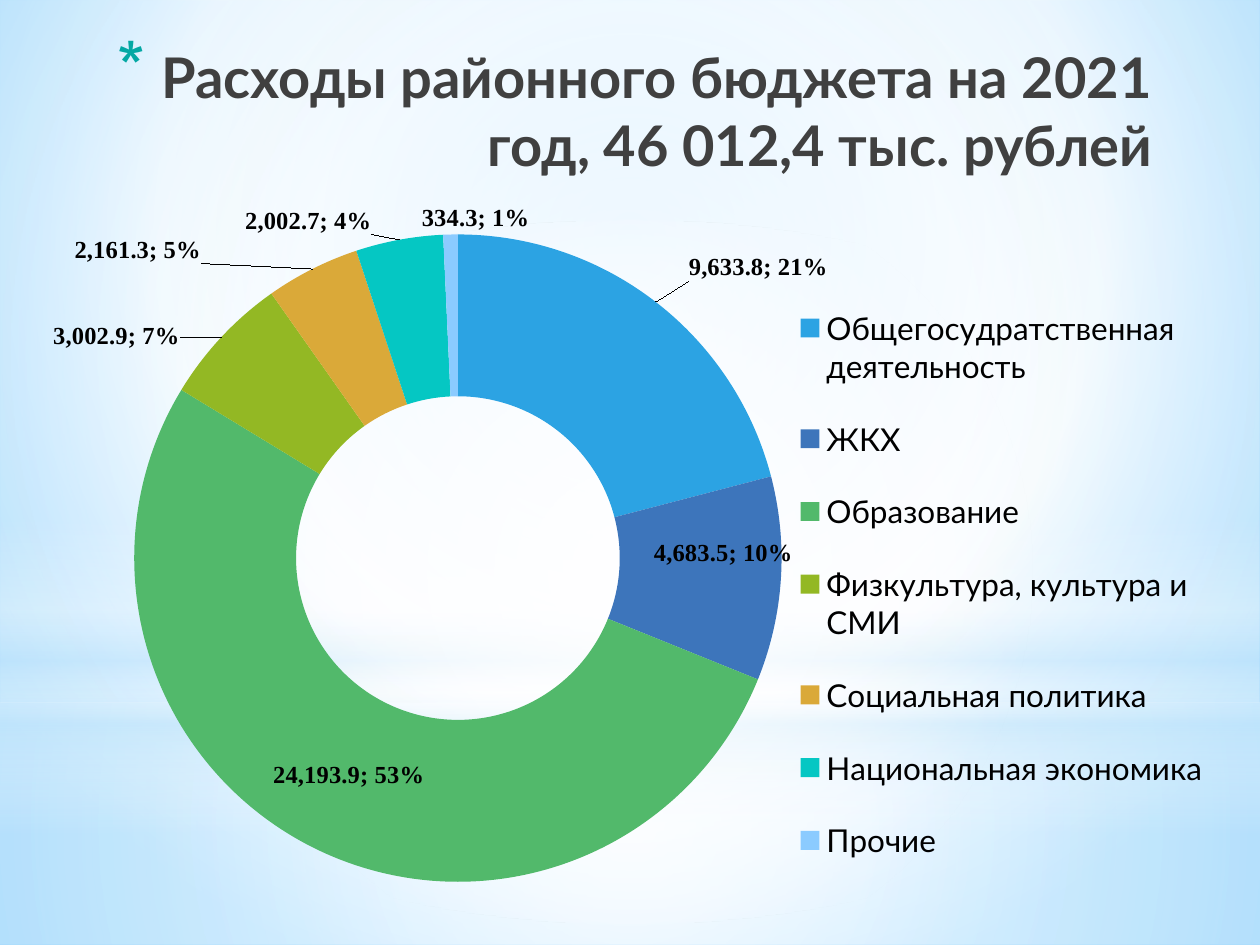
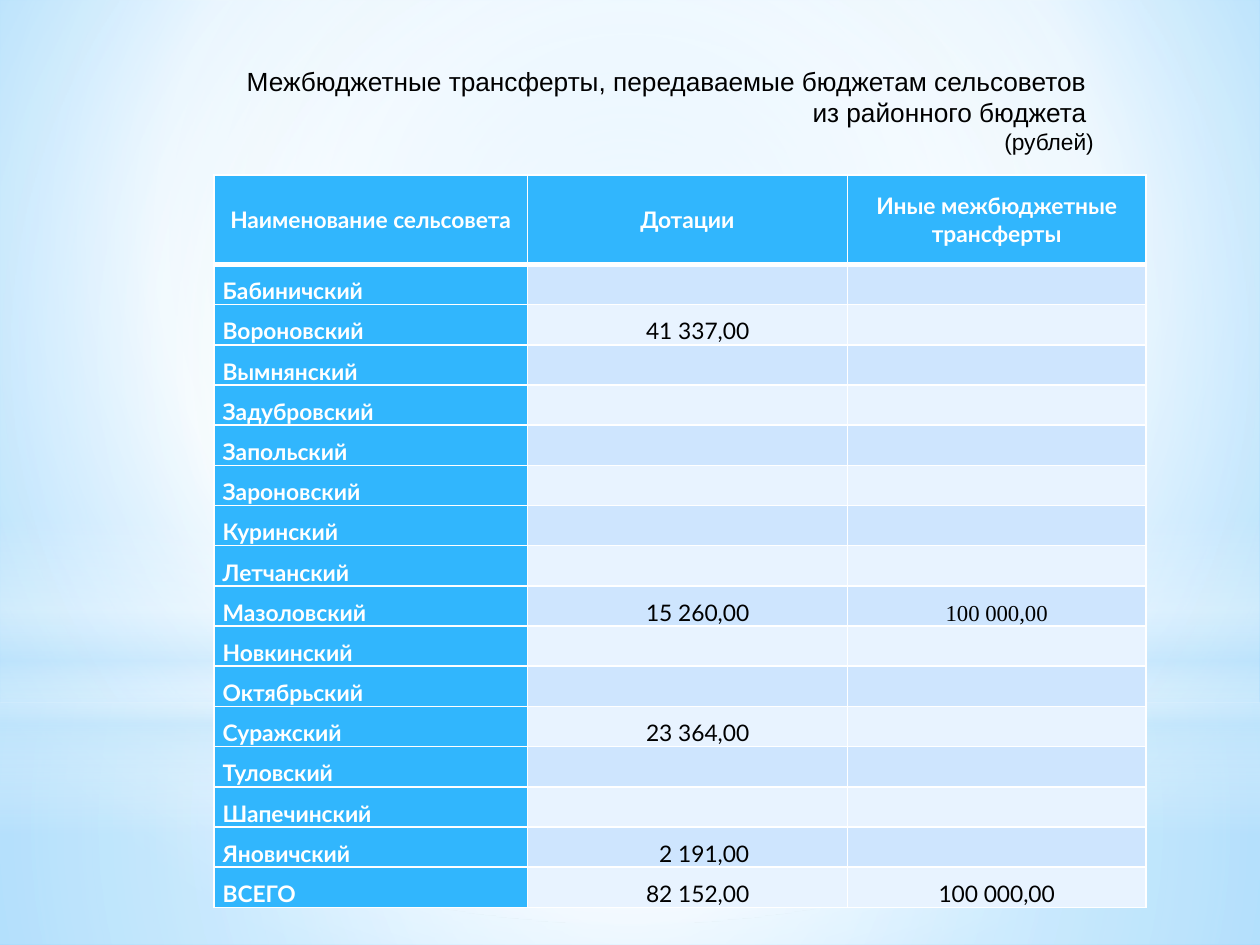
from copy import deepcopy

from lxml import etree
from pptx import Presentation
from pptx.chart.data import CategoryChartData
from pptx.dml.color import RGBColor
from pptx.enum.chart import XL_CHART_TYPE, XL_LEGEND_POSITION
from pptx.enum.shapes import MSO_SHAPE
from pptx.enum.text import MSO_ANCHOR, PP_ALIGN
from pptx.oxml import parse_xml
from pptx.oxml.ns import nsdecls, qn
from pptx.util import Cm, Pt

DOUGHNUT = XL_CHART_TYPE.DOUGHNUT
LEGEND_RIGHT = XL_LEGEND_POSITION.RIGHT
RECTANGLE, OVAL = MSO_SHAPE.RECTANGLE, MSO_SHAPE.OVAL
MIDDLE, BOTTOM = MSO_ANCHOR.MIDDLE, MSO_ANCHOR.BOTTOM
LEFT, CENTER, RIGHT = PP_ALIGN.LEFT, PP_ALIGN.CENTER, PP_ALIGN.RIGHT

WHITE = RGBColor(0xFF, 0xFF, 0xFF)
BLACK = RGBColor(0x00, 0x00, 0x00)
CHARCOAL = RGBColor(0x40, 0x40, 0x40)
TEAL = RGBColor(0x04, 0xA8, 0xA4)
MIST = RGBColor(0xC6, 0xE7, 0xFC)
SKY = RGBColor(0xB0, 0xE0, 0xFF)
AZURE = RGBColor(0x6B, 0xC5, 0xFF)
HEADER_BLUE = RGBColor(0x31, 0xB6, 0xFD)
ROW_DARK = RGBColor(0xCE, 0xE5, 0xFE)
ROW_LIGHT = RGBColor(0xE8, 0xF3, 0xFF)

MAIN_FONT, SERIF_FONT, CAPTION_FONT = "Lato", "Times New Roman", "Arial"
PAGE_WIDTH, PAGE_HEIGHT = 25.4, 19.05
CENTRE = (50, 50, 50, 50)

# Shape, top, height, gradient stops (position, colour, opacity), focus box.
# Without a focus box the gradient runs from top to bottom.
BACKDROP = [
    (RECTANGLE, 14.17, 4.88, [(0, WHITE, 91), (37, WHITE, 76), (100, MIST, 79)], CENTRE),
    (RECTANGLE, 0, 14.17, [(0, WHITE, 89), (48, WHITE, 62), (100, MIST, 79)], CENTRE),
    (RECTANGLE, 10.46, 6.35, [(0, WHITE, 0), (29, WHITE, 30), (45, MIST, 40),
                              (55, WHITE, 26), (65, MIST, 60), (100, WHITE, 0)], None),
    (OVAL, 4.45, 14.17, [(0, WHITE, 100), (56, WHITE, 0)], CENTRE),
]

# Category, value, slice colour, label shift as a share of the chart (None: unmoved).
EXPENSES = [
    ("Общегосудратственная деятельность", 9633.8, RGBColor(0x2C, 0xA3, 0xE3), (0.13, -0.14)),
    ("ЖКХ", 4683.5, RGBColor(0x3D, 0x75, 0xBB), (0.02, -0.03)),
    ("Образование", 24193.9, RGBColor(0x52, 0xB9, 0x6B), None),
    ("Физкультура, культура и СМИ", 3002.9, RGBColor(0x93, 0xB8, 0x24), (-0.14, -0.08)),
    ("Социальная политика", 2161.3, RGBColor(0xDA, 0xA9, 0x39), (-0.18, -0.13)),
    ("Национальная экономика", 2002.7, RGBColor(0x05, 0xC7, 0xC3), (-0.09, -0.14)),
    ("Прочие", 334.3, RGBColor(0x8B, 0xCB, 0xFF), (0.02, -0.14)),
]

TABLE_HEADER = ["Наименование сельсовета", "Дотации", "Иные межбюджетные трансферты"]
COUNCILS = ["Бабиничский", "Вороновский", "Вымнянский", "Задубровский", "Запольский",
            "Зароновский", "Куринский", "Летчанский", "Мазоловский", "Новкинский",
            "Октябрьский", "Суражский", "Туловский", "Шапечинский", "Яновичский", "ВСЕГО"]
GRANTS = {"Вороновский": "41 337,00", "Мазоловский": "15 260,00", "Суражский": "23 364,00",
          "Яновичский": "2 191,00", "ВСЕГО": "82 152,00"}
OTHER_TRANSFERS = {"Мазоловский": "100 000,00", "ВСЕГО": "100 000,00"}


def set_gradient(holder, stops, focus=None):
    """Replace the solid fill inside holder with a gradient."""
    stop_xml = "".join(
        f'<a:gs pos="{position * 1000}"><a:srgbClr val="{colour}">'
        f'<a:alpha val="{opacity * 1000}"/></a:srgbClr></a:gs>'
        for position, colour, opacity in stops)
    if focus:
        sides = " ".join(f'{side}="{share * 1000}"' for side, share in zip("ltrb", focus))
        direction = f'<a:path path="circle"><a:fillToRect {sides}/></a:path>'
    else:
        direction = '<a:lin ang="5400000" scaled="0"/>'
    solid = holder.find(qn("a:solidFill"))
    holder.replace(solid, parse_xml(
        f'<a:gradFill {nsdecls("a")} rotWithShape="1"><a:gsLst>{stop_xml}</a:gsLst>'
        f'{direction}</a:gradFill>'))


def set_master_background(deck):
    master = deck.slide_master
    master.background.fill.solid()
    set_gradient(master.element.find(".//" + qn("p:bgPr")),
                 [(0, SKY, 100), (60, WHITE, 100), (100, AZURE, 100)], (20, 10, 20, 60))


def add_page(deck):
    """Add a blank slide with the shared backdrop."""
    page = deck.slides.add_slide(deck.slide_layouts[6])
    for kind, top, height, stops, focus in BACKDROP:
        band = page.shapes.add_shape(kind, 0, Cm(top), Cm(PAGE_WIDTH), Cm(height))
        band.shadow.inherit = False
        band.line.fill.background()
        band.fill.solid()
        set_gradient(band.element.spPr, stops, focus)
    return page


def style_font(font, size, colour, name=MAIN_FONT, bold=False):
    font.size, font.name, font.bold = Pt(size), name, bold
    font.color.rgb = colour


def add_span(para, text, *style, **options):
    span = para.add_run()
    span.text = text
    style_font(span.font, *style, **options)


def add_text_box(page, box):
    frame = page.shapes.add_textbox(*map(Cm, box)).text_frame
    frame.word_wrap = True
    frame.vertical_anchor = MIDDLE
    return frame


def add_title(page, box, text):
    para = add_text_box(page, box).paragraphs[0]
    para.alignment = RIGHT
    add_span(para, text, 32, CHARCOAL, bold=True)
    properties = para._p.get_or_add_pPr()
    properties.set("marL", str(Cm(0.89)))
    properties.set("indent", str(-Cm(0.89)))
    colour = etree.SubElement(properties, qn("a:buClr"))
    etree.SubElement(colour, qn("a:srgbClr"), val=str(TEAL))
    etree.SubElement(properties, qn("a:buSzPct"), val="128000")
    etree.SubElement(properties, qn("a:buChar"), char="*")


def layout_xml(x, y, size=None, inner=False):
    """Describe a fixed place when size is given, else a shift."""
    parts = [("layoutTarget", "inner")] if inner else []
    if size:
        parts += [("xMode", "edge"), ("yMode", "edge")]
    parts += [("x", x), ("y", y)]
    if size:
        parts += zip("wh", size)
    body = "".join(f'<c:{tag} val="{value}"/>' for tag, value in parts)
    return parse_xml(f'<c:layout {nsdecls("c")}><c:manualLayout>{body}'
                     '</c:manualLayout></c:layout>')


def set_layout(holder, position, layout):
    """Give a chart part its only layout, as the child at position."""
    for old_layout in holder.findall(qn("c:layout")):
        holder.remove(old_layout)
    holder.insert(position, layout)


def place_labels(labels):
    """Move the slice labels, each with the settings all labels share."""
    leader = labels.find(qn("c:showLeaderLines"))
    separator = etree.Element(qn("c:separator"))
    separator.text = "; "
    leader.addprevious(separator)
    shared = [part for part in labels if part is not leader]
    moved = [(index, row[3]) for index, row in enumerate(EXPENSES) if row[3]]
    for place, (index, shift) in enumerate(moved):
        label = etree.Element(qn("c:dLbl"))
        etree.SubElement(label, qn("c:idx"), val=str(index))
        label.append(layout_xml(*shift))
        label.extend(deepcopy(part) for part in shared)
        labels.insert(place, label)


def add_expense_chart(page, box):
    data = CategoryChartData(number_format="#,##0.0")
    data.categories = [row[0] for row in EXPENSES]
    data.add_series("Расходы", [row[1] for row in EXPENSES])
    chart = page.shapes.add_chart(DOUGHNUT, *map(Cm, box), data).chart
    chart.has_title = False
    style_font(chart.font, 18, BLACK)

    chart.has_legend = True
    legend = chart.legend
    legend.position = LEGEND_RIGHT
    legend.include_in_layout = False
    style_font(legend.font, 18, BLACK)
    set_layout(chart.element.find(".//" + qn("c:legend")), 1,
               layout_xml(0.64, 0.1, size=(0.36, 0.88)))
    set_layout(chart.element.find(".//" + qn("c:plotArea")), 0,
               layout_xml(0.077, 0.043, size=(0.553, 0.92), inner=True))

    plot = chart.plots[0]
    plot.vary_by_categories = True
    series = plot.series[0]
    for index, row in enumerate(EXPENSES):
        piece = series.points[index].format
        piece.fill.solid()
        piece.fill.fore_color.rgb = row[2]
        piece.line.fill.background()

    labels = series.data_labels
    labels.show_value = labels.show_percentage = True
    style_font(labels.font, 14, BLACK, SERIF_FONT, bold=True)
    place_labels(chart.element.find(f".//{qn('c:ser')}/{qn('c:dLbls')}"))


def add_caption(page, box, lines):
    frame = add_text_box(page, box)
    for index, (text, size) in enumerate(lines):
        para = frame.add_paragraph() if index else frame.paragraphs[0]
        para.alignment = RIGHT
        add_span(para, text, size, BLACK, CAPTION_FONT)


def fill_cell(cell, text, fill, colour, align, anchor=BOTTOM, bold=False,
              font=MAIN_FONT, right_inset=0.18, bottom_line=1):
    cell.margin_left, cell.margin_right = Cm(0.18), Cm(right_inset)
    cell.margin_top = cell.margin_bottom = 0
    cell.vertical_anchor = anchor
    para = cell.text_frame.paragraphs[0]
    para.alignment = align
    if text:
        add_span(para, text, 13, colour, font, bold)
    properties = cell._tc.get_or_add_tcPr()
    for side, width in zip("LRTB", (1, 1, 1, bottom_line)):
        line = etree.SubElement(properties, qn(f"a:ln{side}"), w=str(Pt(width)))
        paint = etree.SubElement(line, qn("a:solidFill"))
        etree.SubElement(paint, qn("a:srgbClr"), val=str(WHITE))
    cell.fill.solid()
    cell.fill.fore_color.rgb = fill


def add_transfer_table(page, left, top):
    widths, header_height, row_height = (6.32, 6.45, 6.02), 1.8, 0.81
    height = header_height + row_height * len(COUNCILS)
    table = page.shapes.add_table(len(COUNCILS) + 1, len(widths), Cm(left), Cm(top),
                                  Cm(sum(widths)), Cm(height)).table
    for column, width in zip(table.columns, widths):
        column.width = Cm(width)
    for index, row in enumerate(table.rows):
        row.height = Cm(row_height if index else header_height)
    for index, text in enumerate(TABLE_HEADER):
        fill_cell(table.cell(0, index), text, HEADER_BLUE, WHITE, CENTER, MIDDLE,
                  bold=True, bottom_line=3)
    for index, council in enumerate(COUNCILS, 1):
        name, grant, other = (table.cell(index, column) for column in range(3))
        band = ROW_DARK if index % 2 else ROW_LIGHT
        fill_cell(name, council, HEADER_BLUE, WHITE, LEFT, bold=True)
        fill_cell(grant, GRANTS.get(council), band, BLACK, RIGHT, right_inset=1.98)
        fill_cell(other, OTHER_TRANSFERS.get(council), band, BLACK, CENTER,
                  font=MAIN_FONT if council == "ВСЕГО" else SERIF_FONT)
        if council in OTHER_TRANSFERS:
            other.text_frame.paragraphs[0].line_spacing = Pt(14)


def main():
    deck = Presentation()
    deck.slide_width, deck.slide_height = Cm(PAGE_WIDTH), Cm(PAGE_HEIGHT)
    set_master_background(deck)

    expenses = add_page(deck)
    add_title(expenses, (1.7, 0.63, 21.79, 3.18),
              "Расходы районного бюджета на 2021 год, 46 012,4 тыс. рублей")
    add_expense_chart(expenses, (0.89, 4.11, 23.6, 14.2))

    transfers = add_page(deck)
    add_transfer_table(transfers, 4.31, 3.53)
    add_caption(transfers, (3.68, 1.18, 18.62, 2.08), [
        ("Межбюджетные трансферты, передаваемые бюджетам сельсоветов ", 15),
        ("из районного бюджета ", 15),
        ("(рублей)", 13),
    ])
    deck.save("out.pptx")


if __name__ == "__main__":
    main()
